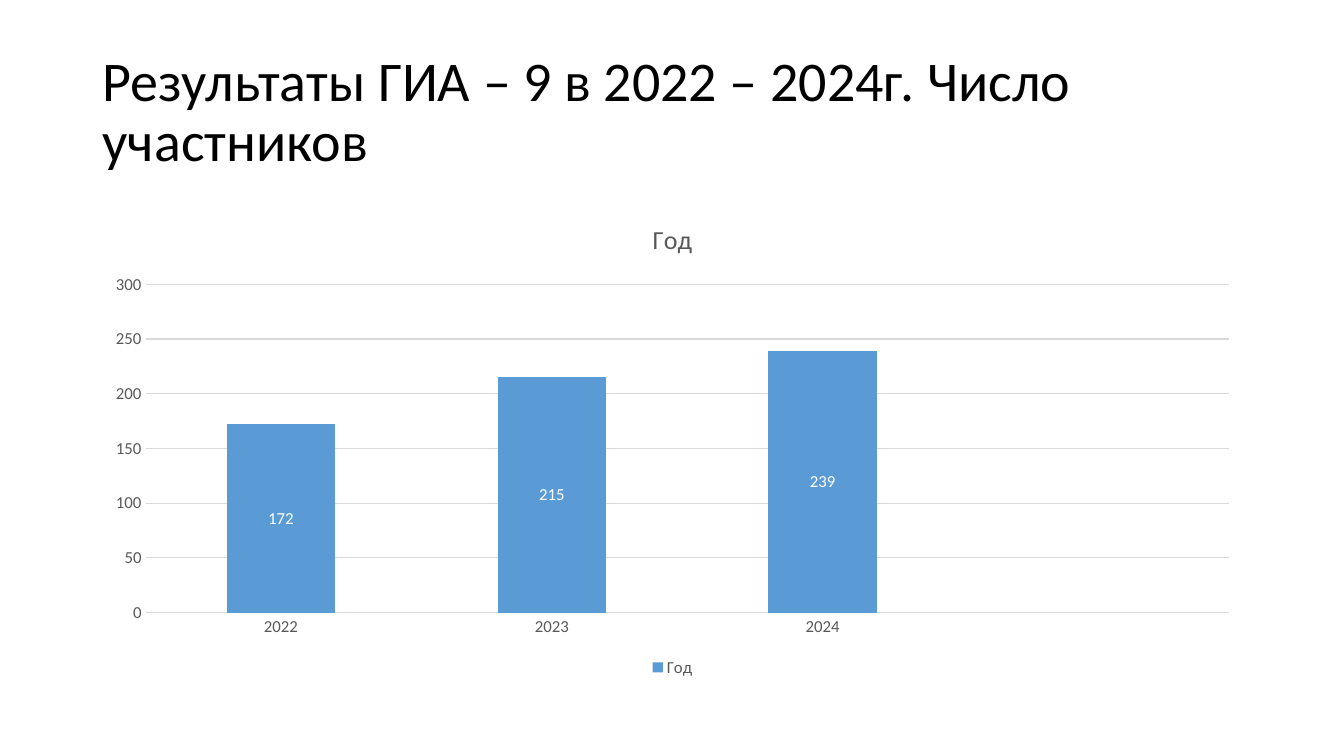
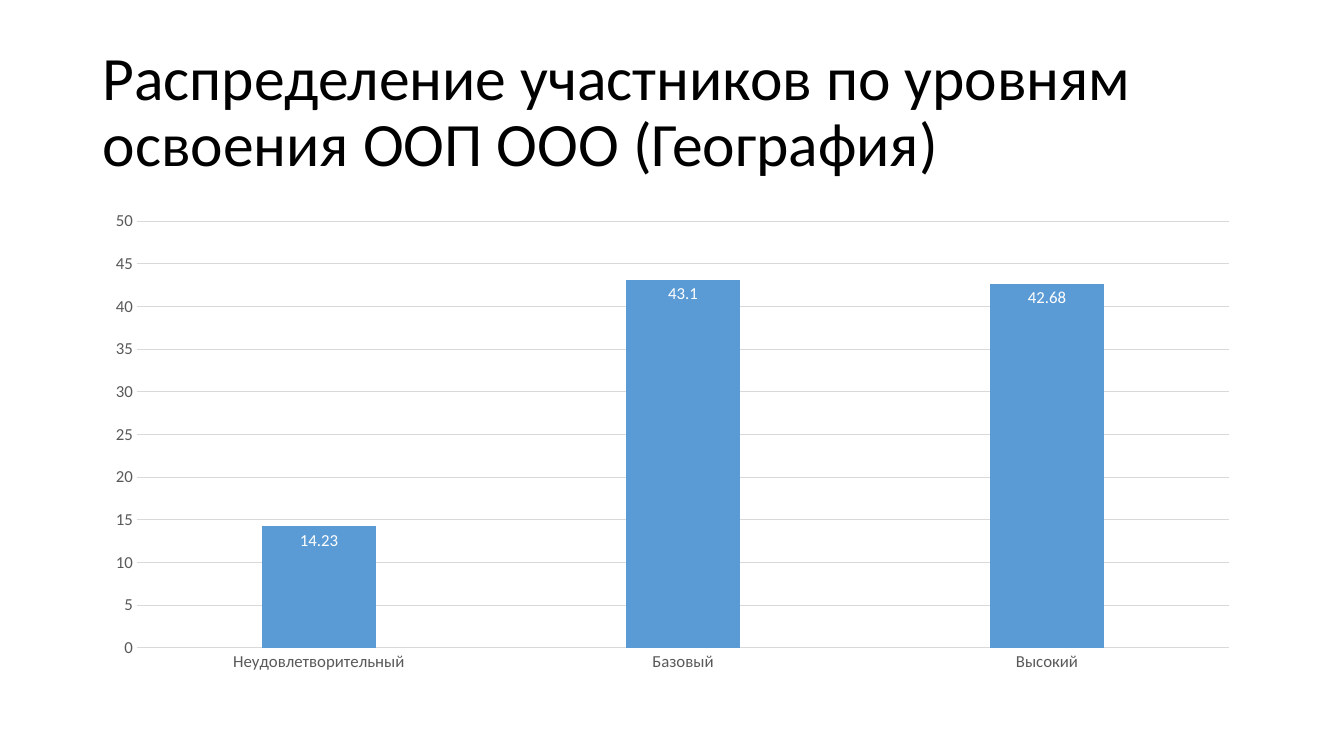
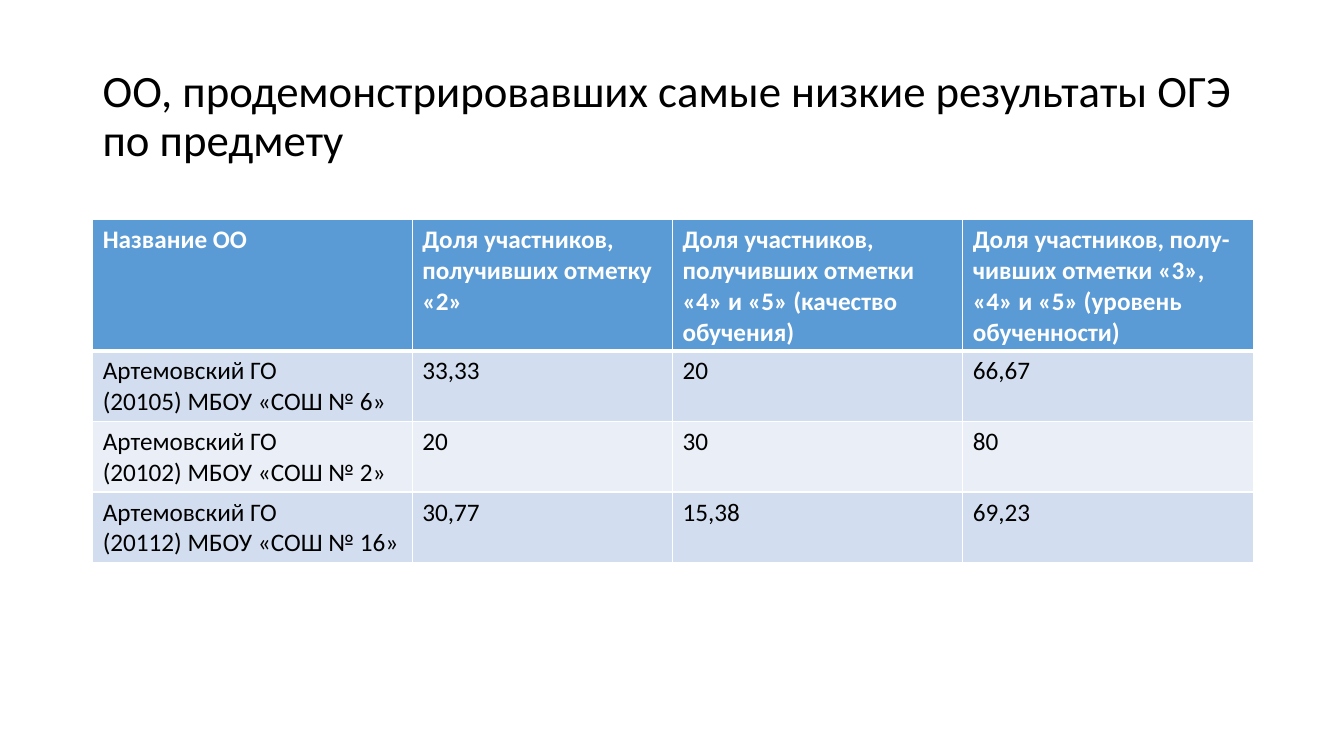
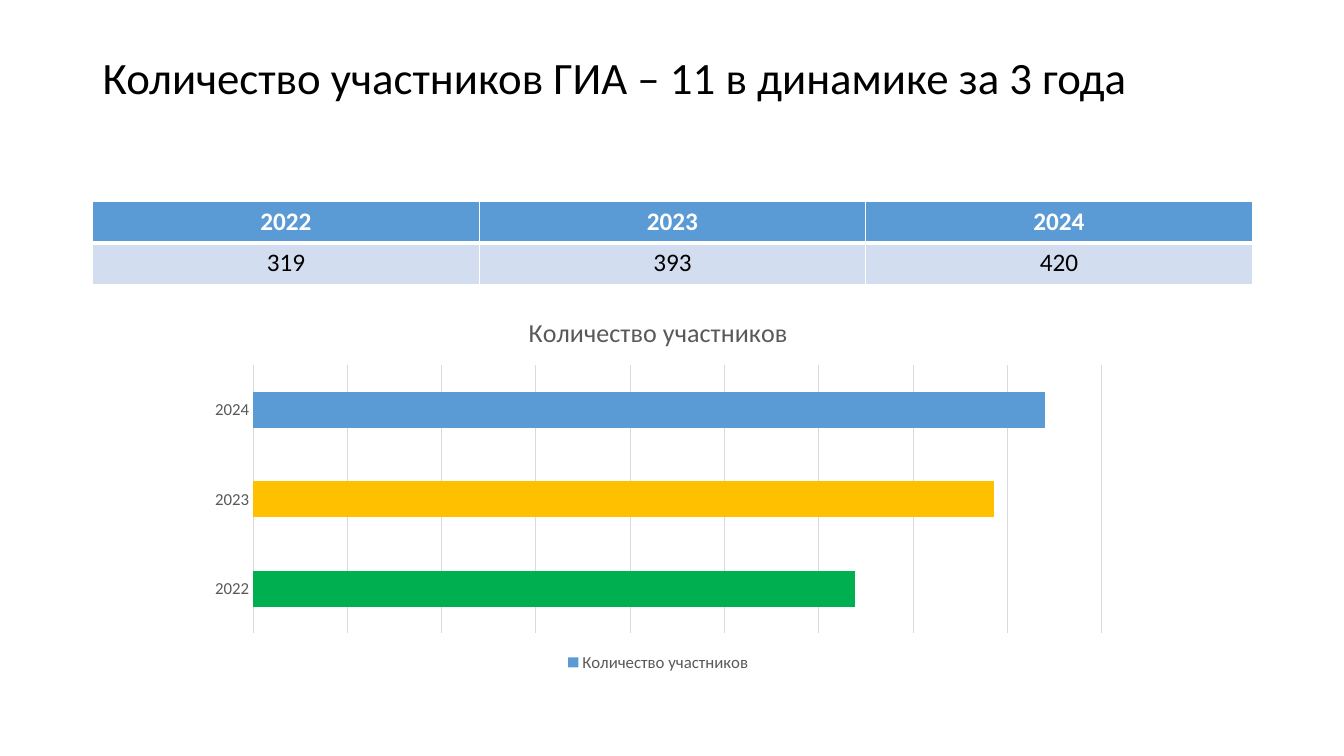
from dataclasses import dataclass, field
from typing import Optional

from lxml import etree
from pptx import Presentation, util as u
from pptx.chart import data as chart_data
from pptx.dml.color import RGBColor
from pptx.enum import chart as charts, text
from pptx.oxml import ns
from pptx.slide import Slide

FONT = "Calibri"
COLORS = {
    "black": "000000", "white": "FFFFFF", "gray": "595959", "grid": "D9D9D9",
    "blue": "5B9BD5", "band": "D2DEEF", "light": "EAEFF7",
    "green": "00B050", "gold": "FFC000",
}
LEFT, WIDTH = 0.92, 11.5


@dataclass
class Box:
    left: float
    top: float
    width: float
    height: float

    def lengths(self) -> list:
        return [u.Inches(n) for n in (self.left, self.top, self.width, self.height)]


@dataclass
class BarChart:
    kind: charts.XL_CHART_TYPE
    box: Box
    series: str
    categories: list[str]
    values: list[Optional[float]]
    maximum: int
    unit: int
    gap: int
    overlap: int = 0
    titled: bool = True
    label_position: Optional[charts.XL_LABEL_POSITION] = None
    show_values: bool = True
    point_colors: dict[int, str] = field(default_factory=dict)


@dataclass
class Table:
    top: float
    columns: list[float]
    row_heights: list[float]
    rows: list[list[str]]
    align: text.PP_ALIGN = text.PP_ALIGN.LEFT


def rgb(name: str) -> RGBColor:
    return RGBColor.from_string(COLORS[name])


def style_font(font, size: float, color: str, bold: bool = False) -> None:
    font.name = FONT
    font.size = u.Pt(size)
    font.bold = bold
    font.color.rgb = rgb(color)


def add_title(slide: Slide, title: str, size: float, top: float = 0.4, height: float = 1.45) -> None:
    shape = slide.shapes.add_textbox(*Box(LEFT, top, WIDTH, height).lengths())
    frame = shape.text_frame
    frame.word_wrap = True
    frame.vertical_anchor = text.MSO_ANCHOR.MIDDLE
    paragraph = frame.paragraphs[0]
    paragraph.line_spacing = 0.9
    run = paragraph.add_run()
    run.text = title
    style_font(run.font, size, "black")


# Charts
def style_line(line, color: str) -> None:
    line.color.rgb = rgb(color)
    line.width = u.Pt(0.75)


def style_axes(chart, item: BarChart) -> None:
    category, value = chart.category_axis, chart.value_axis
    for axis in (category, value):
        axis.major_tick_mark = axis.minor_tick_mark = charts.XL_TICK_MARK.NONE
        style_font(axis.tick_labels.font, 12, "gray")
    category.has_major_gridlines = False
    style_line(category.format.line, "grid")
    value.minimum_scale, value.maximum_scale = 0, item.maximum
    value.major_unit = item.unit
    value.visible = item.show_values
    value.format.line.fill.background()
    value.has_major_gridlines = True
    style_line(value.major_gridlines.format.line, "grid")


def add_bar_chart(slide: Slide, item: BarChart) -> None:
    data = chart_data.CategoryChartData()
    data.categories = item.categories
    data.add_series(item.series, item.values)
    chart = slide.shapes.add_chart(item.kind, *item.box.lengths(), data).chart
    style_font(chart.font, 10, "black")
    style_axes(chart, item)

    # Title and legend go together
    chart.has_title = chart.has_legend = item.titled
    if item.titled:
        run = chart.chart_title.text_frame.paragraphs[0].add_run()
        run.text = item.series
        style_font(run.font, 18.6, "gray")
        chart.legend.position = charts.XL_LEGEND_POSITION.BOTTOM
        chart.legend.include_in_layout = False
        style_font(chart.legend.font, 12, "gray")

    # Bars
    plot = chart.plots[0]
    plot.vary_by_categories = False
    plot.gap_width, plot.overlap = item.gap, item.overlap
    series = plot.series[0]
    series.invert_if_negative = False
    series.format.fill.solid()
    series.format.fill.fore_color.rgb = rgb("blue")
    for index, color in item.point_colors.items():
        fill = series.points[index].format.fill
        fill.solid()
        fill.fore_color.rgb = rgb(color)
    if item.label_position is not None:
        labels = series.data_labels
        labels.show_value = True
        labels.position = item.label_position
        style_font(labels.font, 12, "white")


# Tables
def set_borders(cell, top: float, bottom: float) -> None:
    properties = cell._tc.get_or_add_tcPr()
    widths = {"a:lnL": 1, "a:lnR": 1, "a:lnT": top, "a:lnB": bottom}
    for index, (tag, width) in enumerate(widths.items()):
        line = etree.Element(ns.qn(tag), w=str(u.Pt(width)))
        fill = etree.SubElement(line, ns.qn("a:solidFill"))
        etree.SubElement(fill, ns.qn("a:srgbClr"), val=COLORS["white"])
        properties.insert(index, line)


def add_table(slide: Slide, item: Table) -> None:
    box = Box(LEFT, item.top, WIDTH, sum(item.row_heights))
    table = slide.shapes.add_table(len(item.rows), len(item.columns), *box.lengths()).table
    for column, width in zip(table.columns, item.columns):
        column.width = u.Inches(width)
    for row, height in zip(table.rows, item.row_heights):
        row.height = u.Inches(height)
    for row_index, row in enumerate(item.rows):
        header = row_index == 0
        color = "blue" if header else ("light", "band")[row_index % 2]
        for column_index, content in enumerate(row):
            cell = table.cell(row_index, column_index)
            cell.fill.solid()
            cell.fill.fore_color.rgb = rgb(color)
            set_borders(cell, 3 if row_index == 1 else 1, 3 if header else 1)
            frame = cell.text_frame
            for line_index, line in enumerate(content.split("\n")):
                paragraph = frame.add_paragraph() if line_index else frame.paragraphs[0]
                paragraph.alignment = item.align
                run = paragraph.add_run()
                run.text = line
                style_font(run.font, 18, "white" if header else "black", header)


def main() -> None:
    presentation = Presentation()
    presentation.slide_width, presentation.slide_height = u.Inches(13.33), u.Inches(7.5)
    blank = presentation.slide_layouts[6]
    years = ["2022", "2023", "2024"]
    chart_box = Box(LEFT, 2, WIDTH, 4.76)

    # Slide 1: participants, grade 9
    slide = presentation.slides.add_slide(blank)
    add_title(slide, "Результаты ГИА – 9 в 2022 – 2024г. Число участников", 40)
    add_bar_chart(slide, BarChart(
        charts.XL_CHART_TYPE.COLUMN_STACKED, chart_box, "Год",
        years + [""], [172, 215, 239, None], maximum=300, unit=50, gap=150, overlap=100,
        label_position=charts.XL_LABEL_POSITION.CENTER))

    # Slide 2: levels in geography
    slide = presentation.slides.add_slide(blank)
    add_title(slide, "Распределение участников по уровням освоения ООП ООО (География)", 44)
    add_bar_chart(slide, BarChart(
        charts.XL_CHART_TYPE.COLUMN_CLUSTERED, chart_box, "Series 1",
        ["Неудовлетворительный", "Базовый", "Высокий"], [14.23, 43.1, 42.68],
        maximum=50, unit=5, gap=219, overlap=-27, titled=False,
        label_position=charts.XL_LABEL_POSITION.INSIDE_END))

    # Slide 3: schools with the lowest results
    slide = presentation.slides.add_slide(blank)
    add_title(slide, "ОО, продемонстрировавших самые низкие результаты ОГЭ по предмету", 32, 0.75, 0.83)
    add_table(slide, Table(2.18, [3.17, 2.58, 2.88, 2.88], [1.3] + [0.7] * 3, [
        ["Название ОО",
         "Доля участников, получивших отметку «2»",
         "Доля участников, получивших отметки «4» и «5» (качество обучения)",
         "Доля участников, полу-чивших отметки «3», «4» и «5» (уровень обученности)"],
        ["Артемовский ГО\n(20105) МБОУ «СОШ № 6»", "33,33", "20", "66,67"],
        ["Артемовский ГО\n(20102) МБОУ «СОШ № 2»", "20", "30", "80"],
        ["Артемовский ГО\n(20112) МБОУ «СОШ № 16»", "30,77", "15,38", "69,23"],
    ]))

    # Slide 4: participants, grade 11
    participants = [319, 393, 420]
    slide = presentation.slides.add_slide(blank)
    add_title(slide, "Количество участников ГИА – 11 в динамике за 3 года", 32, height=0.79)
    add_table(slide, Table(2, [WIDTH / 3] * 3, [0.41] * 2,
                           [years, [str(count) for count in participants]],
                           text.PP_ALIGN.CENTER))
    add_bar_chart(slide, BarChart(
        charts.XL_CHART_TYPE.BAR_CLUSTERED, Box(1.95, 2.94, 9.16, 3.77),
        "Количество участников", years, participants, maximum=450, unit=50, gap=150,
        show_values=False, point_colors={0: "green", 1: "gold"}))

    presentation.save("out.pptx")


if __name__ == "__main__":
    main()
